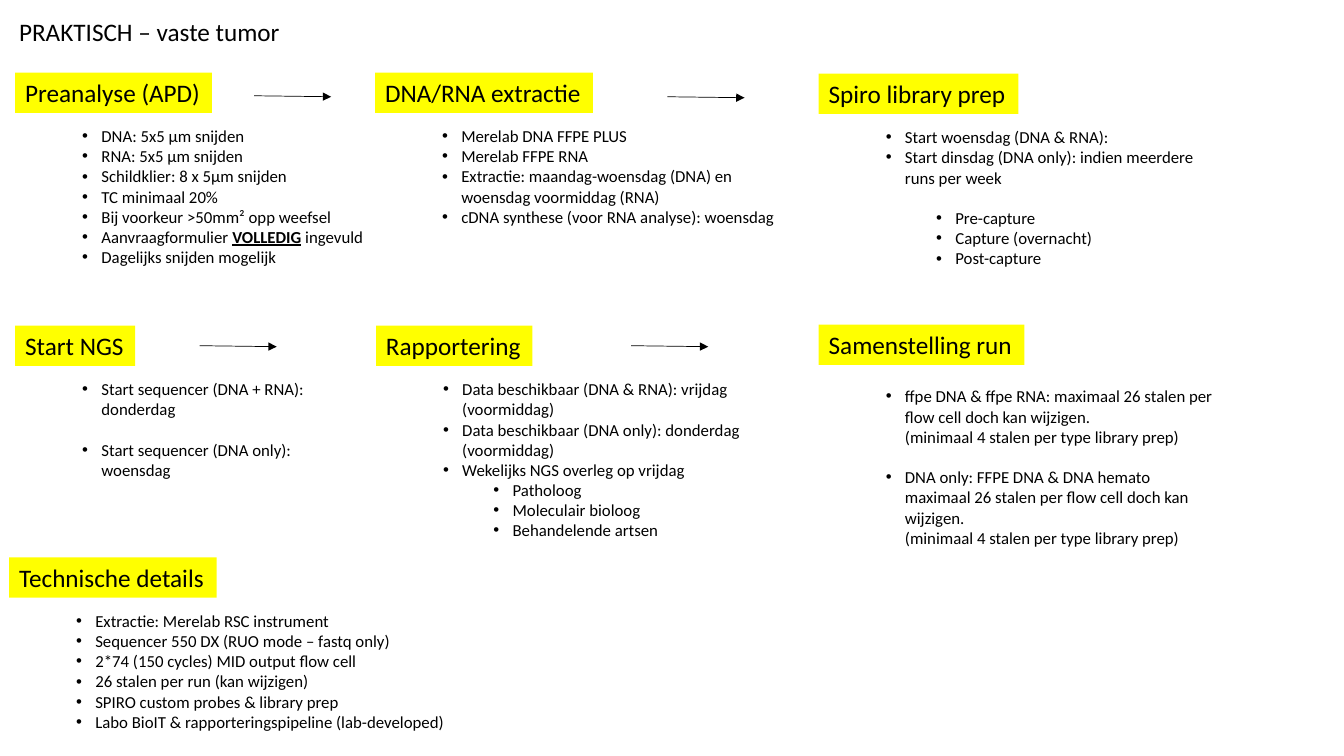
from lxml import etree
from pptx import Presentation
from pptx.dml.color import RGBColor
from pptx.enum.shapes import MSO_CONNECTOR, MSO_SHAPE
from pptx.enum.text import MSO_ANCHOR, PP_ALIGN
from pptx.oxml.ns import qn
from pptx.util import Inches, Pt

RECT = MSO_SHAPE.RECTANGLE
LINE = MSO_CONNECTOR.STRAIGHT
LEFT = PP_ALIGN.LEFT
TOP, MID = MSO_ANCHOR.TOP, MSO_ANCHOR.MIDDLE

COLORS = {"ink": "000000", "mark": "FFFF00"}
WIDE, HIGH = Inches(13.33), Inches(7.5)

# Grid, in percent of the slide's width and height
COLS = (1.13, 27.91, 60.92)
ROWS = (9.6, 43.07, 73.73)
EDGE = 0.68
STEP = 4.25
HEAD = 5.33
ROW, PAD = 2.69, 1.34

# Kinds of list line: (level, bullet, gap above)
DOT, SUB, CONT = (0, True, False), (1, True, False), (0, False, False)
DOT_GAP, SUB_GAP = (0, True, True), (1, True, True)


class Deck:
    def __init__(self):
        self.prs = Presentation()
        self.prs.slide_width, self.prs.slide_height = WIDE, HIGH
        self.slide = self.prs.slides.add_slide(self.prs.slide_layouts[6])
        self.font = "Calibri"
        self.big, self.small = Pt(18), Pt(12)
        self.gap = Pt(14.6)

    def color(self, name):
        return RGBColor.from_string(COLORS[name])

    def place(self, x, y, w, h):
        return [int(v * side / 100) for v, side in
                ((x, WIDE), (y, HIGH), (w, WIDE), (h, HIGH))]

    def run(self, par, text, size, strong=False):
        run = par.add_run()
        run.text = text
        run.font.name, run.font.size = self.font, size
        run.font.color.rgb = self.color("ink")
        if strong:
            run.font.bold = run.font.underline = True

    def title(self, text, x, y, w, h):
        box = self.slide.shapes.add_textbox(*self.place(x, y, w, h))
        box.text_frame.word_wrap = False
        self.run(box.text_frame.paragraphs[0], text, self.big)

    def head(self, text, x, y, w):
        box = self.slide.shapes.add_shape(RECT, *self.place(x, y, w, HEAD))
        box.shadow.inherit = False
        box.fill.solid()
        box.fill.fore_color.rgb = self.color("mark")
        box.line.fill.background()
        frame = box.text_frame
        frame.word_wrap = False
        frame.vertical_anchor = MID
        frame.paragraphs[0].alignment = LEFT
        self.run(frame.paragraphs[0], text, self.big)

    def list(self, lines, x, y, w, rows, wrap):
        spot = self.place(x, y, w, PAD + ROW * rows)
        frame = self.slide.shapes.add_textbox(*spot).text_frame
        frame.word_wrap = wrap
        frame.vertical_anchor = TOP
        for i, ((level, dot, gap), text) in enumerate(lines):
            par = frame.add_paragraph() if i else frame.paragraphs[0]
            par.level = level
            if gap:
                par.space_before = self.gap
            self.indent(par, level, dot)
            # Parts between underscores are strong
            for k, part in enumerate(text.split("_")):
                self.run(par, part, self.small, k % 2 == 1)

    def indent(self, par, level, dot):
        props = par._p.get_or_add_pPr()
        props.set("marL", str(Inches(0.19 + 0.5 * level)))
        props.set("indent", str(Inches(-0.19) if dot else 0))
        if dot:
            etree.SubElement(props, qn("a:buFont")).set("typeface", "Arial")
            etree.SubElement(props, qn("a:buChar")).set("char", "•")
        else:
            etree.SubElement(props, qn("a:buNone"))

    def arrow(self, x, y, w=5.74, drop=0.13):
        left, top, wide, down = self.place(x, y, w, drop)
        line = self.slide.shapes.add_connector(
            LINE, left, top, left + wide, top + down)
        line.line.color.rgb = self.color("ink")
        line.line.width = Pt(0.5)
        tail = etree.SubElement(line.line._get_or_add_ln(), qn("a:tailEnd"))
        tail.set("type", "triangle")
        etree.SubElement(line._element.spPr, qn("a:effectLst"))

    def block(self, text, x, y, w, lines, wide, rows, drop=6.4, wrap=True):
        self.head(text, x, y, w)
        self.list(lines, x + STEP, y + drop, wide, rows, wrap)


def main():
    deck = Deck()
    deck.title("PRAKTISCH – vaste tumor", EDGE, 1.47, 21.08, 9.47)

    # Top row: from tissue to library
    deck.block("Preanalyse (APD)", COLS[0], ROWS[0], 14.63, [
        (DOT, "DNA: 5x5 µm snijden"),
        (DOT, "RNA: 5x5 µm snijden"),
        (DOT, "Schildklier: 8 x 5µm snijden"),
        (DOT, "TC minimaal 20%"),
        (DOT, "Bij voorkeur >50mm² opp weefsel"),
        (DOT, "Aanvraagformulier _VOLLEDIG_ ingevuld"),
        (DOT, "Dagelijks snijden mogelijk"),
    ], 22.58, 7, wrap=False)
    deck.block("DNA/RNA extractie", COLS[1], ROWS[0], 16.2, [
        (DOT, "Merelab DNA FFPE PLUS"),
        (DOT, "Merelab FFPE RNA"),
        (DOT, "Extractie: maandag-woensdag (DNA) en woensdag voormiddag (RNA)"),
        (DOT, "cDNA synthese (voor RNA analyse): woensdag"),
    ], 27, 7)
    deck.block("Spiro library prep", COLS[2], ROWS[0] + 0.13, 14.85, [
        (DOT, "Start woensdag (DNA & RNA):"),
        (DOT, "Start dinsdag (DNA only): indien meerdere runs per week"),
        (SUB_GAP, "Pre-capture"),
        (SUB, "Capture (overnacht)"),
        (SUB, "Post-capture"),
    ], 26.11, 8)

    # Middle row: run and report
    deck.block("Start NGS", COLS[0], ROWS[1], 8.93, [
        (DOT, "Start sequencer (DNA + RNA): donderdag"),
        (DOT_GAP, "Start sequencer (DNA only):"),
        (CONT, "woensdag"),
    ], 23.63, 6)
    deck.block("Rapportering", COLS[1] + 0.07, ROWS[1], 11.63, [
        (DOT, "Data beschikbaar (DNA & RNA): vrijdag"),
        (CONT, "(voormiddag)"),
        (DOT, "Data beschikbaar (DNA only): donderdag"),
        (CONT, "(voormiddag)"),
        (DOT, "Wekelijks NGS overleg op vrijdag"),
        (SUB, "Patholoog"),
        (SUB, "Moleculair bioloog"),
        (SUB, "Behandelende artsen"),
    ], 28.13, 8)
    deck.block("Samenstelling run", COLS[2], ROWS[1] - 0.13, 15.3, [
        (DOT, "ffpe DNA & ffpe RNA: maximaal 26 stalen per flow cell "
              "doch kan wijzigen."),
        (CONT, "(minimaal 4 stalen per type library prep)"),
        (DOT_GAP, "DNA only: FFPE DNA & DNA hemato"),
        (CONT, "maximaal 26 stalen per flow cell doch kan"),
        (CONT, "wijzigen."),
        (CONT, "(minimaal 4 stalen per type library prep)"),
    ], 28.13, 8, drop=7.47)

    # Bottom row: technical details
    deck.block("Technische details", EDGE, ROWS[2], 15.45, [
        (DOT, "Extractie: Merelab RSC instrument"),
        (DOT, "Sequencer 550 DX (RUO mode – fastq only)"),
        (DOT, "2*74 (150 cycles) MID output flow cell"),
        (DOT, "26 stalen per run (kan wijzigen)"),
        (DOT, "SPIRO custom probes & library prep"),
        (DOT, "Labo BioIT & rapporteringspipeline (lab-developed)"),
    ], 45.69, 6)

    # Arrows between the steps
    for x, y in ((18.9, 12.67), (49.66, 12.8), (14.85, 45.73), (46.96, 45.73)):
        deck.arrow(x, y)

    deck.prs.save("out.pptx")


if __name__ == "__main__":
    main()
